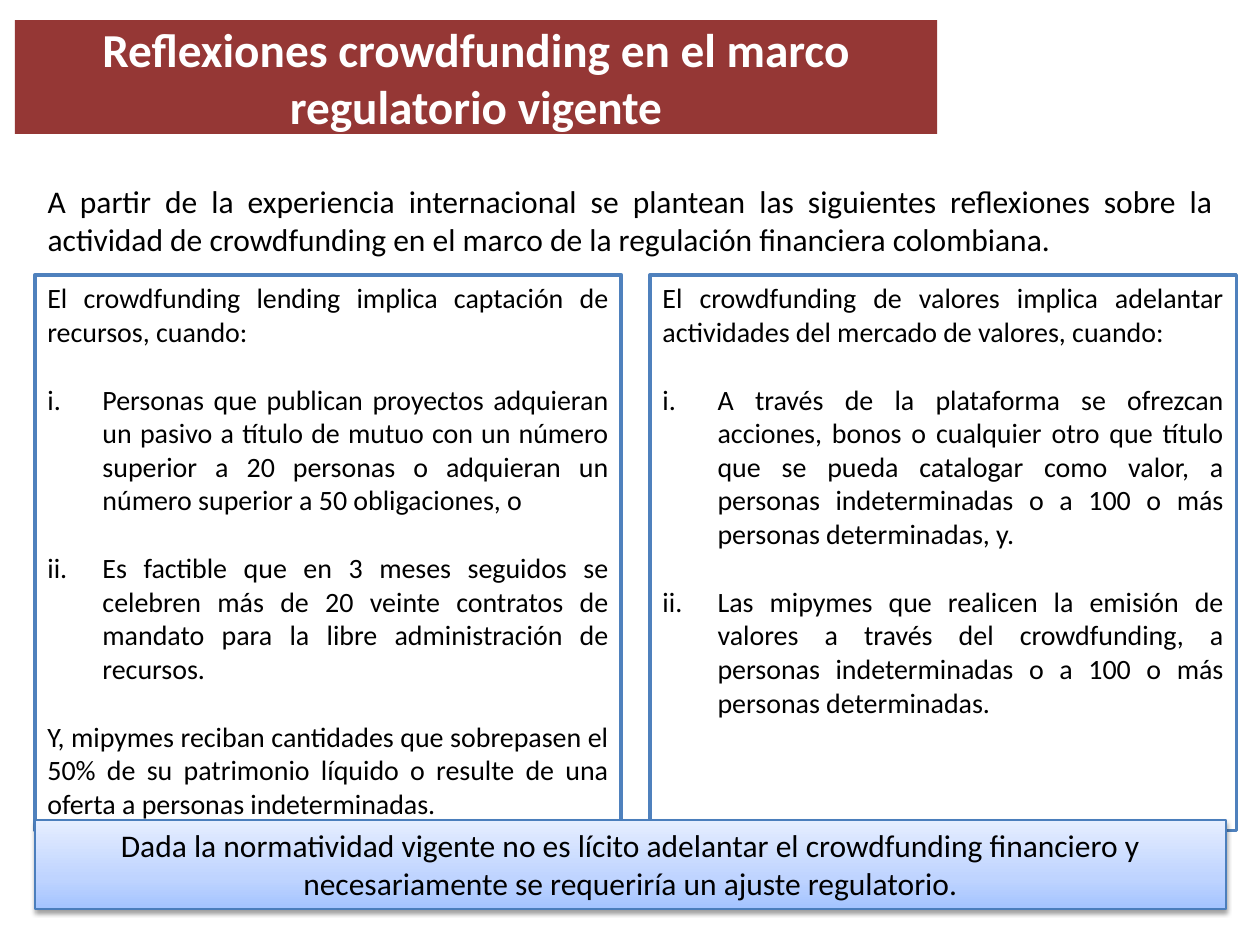
from copy import deepcopy

from lxml import etree
from pptx import Presentation
from pptx.dml.color import RGBColor
from pptx.enum.shapes import MSO_SHAPE
from pptx.enum.text import MSO_ANCHOR, MSO_AUTO_SIZE, PP_ALIGN
from pptx.oxml.ns import qn
from pptx.util import Pt

RECTANGLE = MSO_SHAPE.RECTANGLE
TOP, MIDDLE = MSO_ANCHOR.TOP, MSO_ANCHOR.MIDDLE
CENTER, JUSTIFY = PP_ALIGN.CENTER, PP_ALIGN.JUSTIFY
NO_AUTOFIT = MSO_AUTO_SIZE.NONE

FONT = "Calibri"
WHITE = RGBColor(0xFF, 0xFF, 0xFF)
BLACK = RGBColor(0x00, 0x00, 0x00)
MAROON = RGBColor(0x95, 0x37, 0x35)
BLUE = RGBColor(0x4F, 0x81, 0xBD)
BAR_LINE = RGBColor(0x4B, 0x7E, 0xBC)
BAR_STOPS = [
    (0, RGBColor(0xA4, 0xC4, 0xFF)),
    (0.35, RGBColor(0xBF, 0xD4, 0xFF)),
    (1, RGBColor(0xE6, 0xEE, 0xFF)),
]

TITLE = "Reflexiones crowdfunding en el marco regulatorio vigente"
INTRO = (
    "A partir de la experiencia internacional se plantean las siguientes reflexiones "
    "sobre la actividad de crowdfunding en el marco de la regulación financiera colombiana."
)
COLUMNS = [
    [
        ("El crowdfunding lending implica captación de recursos, cuando:", False),
        ("Personas que publican proyectos adquieran un pasivo a título de mutuo con un "
         "número superior a 20 personas o adquieran un número superior a 50 "
         "obligaciones, o", True),
        ("Es factible que en 3 meses seguidos se celebren más de 20 veinte contratos de "
         "mandato para la libre administración de recursos.", True),
        ("Y, mipymes reciban cantidades que sobrepasen el 50% de su patrimonio líquido o "
         "resulte de una oferta a personas indeterminadas.", False),
    ],
    [
        ("El crowdfunding de valores implica adelantar actividades del mercado de "
         "valores, cuando:", False),
        ("A través de la plataforma se ofrezcan acciones, bonos o cualquier otro que "
         "título que se pueda catalogar como valor, a personas indeterminadas o a 100 o "
         "más personas determinadas, y.", True),
        ("Las mipymes que realicen la emisión de valores a través del crowdfunding, a "
         "personas indeterminadas o a 100 o más personas determinadas.", True),
    ],
]
CONCLUSION = (
    "Dada la normatividad vigente no es lícito adelantar el crowdfunding financiero y "
    "necesariamente se requeriría un ajuste regulatorio."
)

LEFT, CONTENT_WIDTH = 20, 680.5
COLUMN_TOP, COLUMN_WIDTH, COLUMN_HEIGHT, COLUMN_GAP = 157, 335, 317.5, 16.5
NUMBER_INDENT = 31.5
ITEM_GAP = 19.5


def place(shape, left, top, width, height):
    shape.left, shape.top = Pt(left), Pt(top)
    shape.width, shape.height = Pt(width), Pt(height)


def write_text(shape, items, size, color=BLACK, bold=False, align=JUSTIFY, anchor=TOP):
    frame = shape.text_frame
    frame.word_wrap = True
    frame.auto_size = NO_AUTOFIT
    frame.vertical_anchor = anchor
    for index, (text, numbered) in enumerate(items):
        paragraph = frame.paragraphs[0] if index == 0 else frame.add_paragraph()
        paragraph.text = text
        paragraph.alignment = align
        paragraph.space_before = Pt(ITEM_GAP if index else 0)
        indent = Pt(NUMBER_INDENT) if numbered else 0
        properties = paragraph._p.get_or_add_pPr()
        properties.set("marL", str(indent))
        properties.set("indent", str(-indent))
        if numbered:
            etree.SubElement(properties, qn("a:buFont"), typeface="+mj-lt")
            etree.SubElement(properties, qn("a:buAutoNum"), type="romanLcPeriod")
        else:
            etree.SubElement(properties, qn("a:buNone"))
        font = paragraph.font
        font.name, font.size, font.bold = FONT, Pt(size), bold
        font.color.rgb = color


def add_box(slide, left, top, width, height, line_color, line_width):
    box = slide.shapes.add_shape(RECTANGLE, Pt(left), Pt(top), Pt(width), Pt(height))
    box.shadow.inherit = False
    box.fill.solid()
    box.fill.fore_color.rgb = WHITE
    box.line.color.rgb = line_color
    box.line.width = Pt(line_width)
    return box


def apply_gradient(shape, stops):
    shape.fill.gradient()
    shape.fill.gradient_angle = 90
    stop_list = shape._element.spPr.find(".//" + qn("a:gsLst"))
    stop_list.append(deepcopy(stop_list[-1]))
    for stop, (position, color) in zip(shape.fill.gradient_stops, stops):
        stop.position = position
        stop.color.rgb = color


def add_shadow(shape):
    effects = shape._element.spPr.find(qn("a:effectLst"))
    shadow = etree.SubElement(
        effects, qn("a:outerShdw"), blurRad=str(Pt(3.1)), dist=str(Pt(1.6)),
        dir="5400000", rotWithShape="0",
    )
    color = etree.SubElement(shadow, qn("a:srgbClr"), val=str(BLACK))
    etree.SubElement(color, qn("a:alpha"), val="38000")


def main():
    presentation = Presentation()
    presentation.slide_width, presentation.slide_height = Pt(720), Pt(540)
    slide = presentation.slides.add_slide(presentation.slide_layouts[1])

    title = slide.shapes.title
    place(title, 8.5, 11.5, 527, 65)
    title.fill.solid()
    title.fill.fore_color.rgb = MAROON
    write_text(title, [(TITLE, False)], 27, color=WHITE, bold=True,
               align=CENTER, anchor=MIDDLE)

    intro = slide.placeholders[1]
    place(intro, LEFT, 100.5, CONTENT_WIDTH, 62.5)
    write_text(intro, [(INTRO, False)], 18)

    for index, items in enumerate(COLUMNS):
        left = LEFT + index * (COLUMN_WIDTH + COLUMN_GAP)
        column = add_box(slide, left, COLUMN_TOP, COLUMN_WIDTH, COLUMN_HEIGHT, BLUE, 2)
        write_text(column, items, 16)

    conclusion = add_box(slide, LEFT, 468.5, CONTENT_WIDTH, 51, BAR_LINE, 0.75)
    apply_gradient(conclusion, BAR_STOPS)
    add_shadow(conclusion)
    write_text(conclusion, [(CONCLUSION, False)], 18, align=CENTER)

    presentation.save("out.pptx")


if __name__ == "__main__":
    main()
